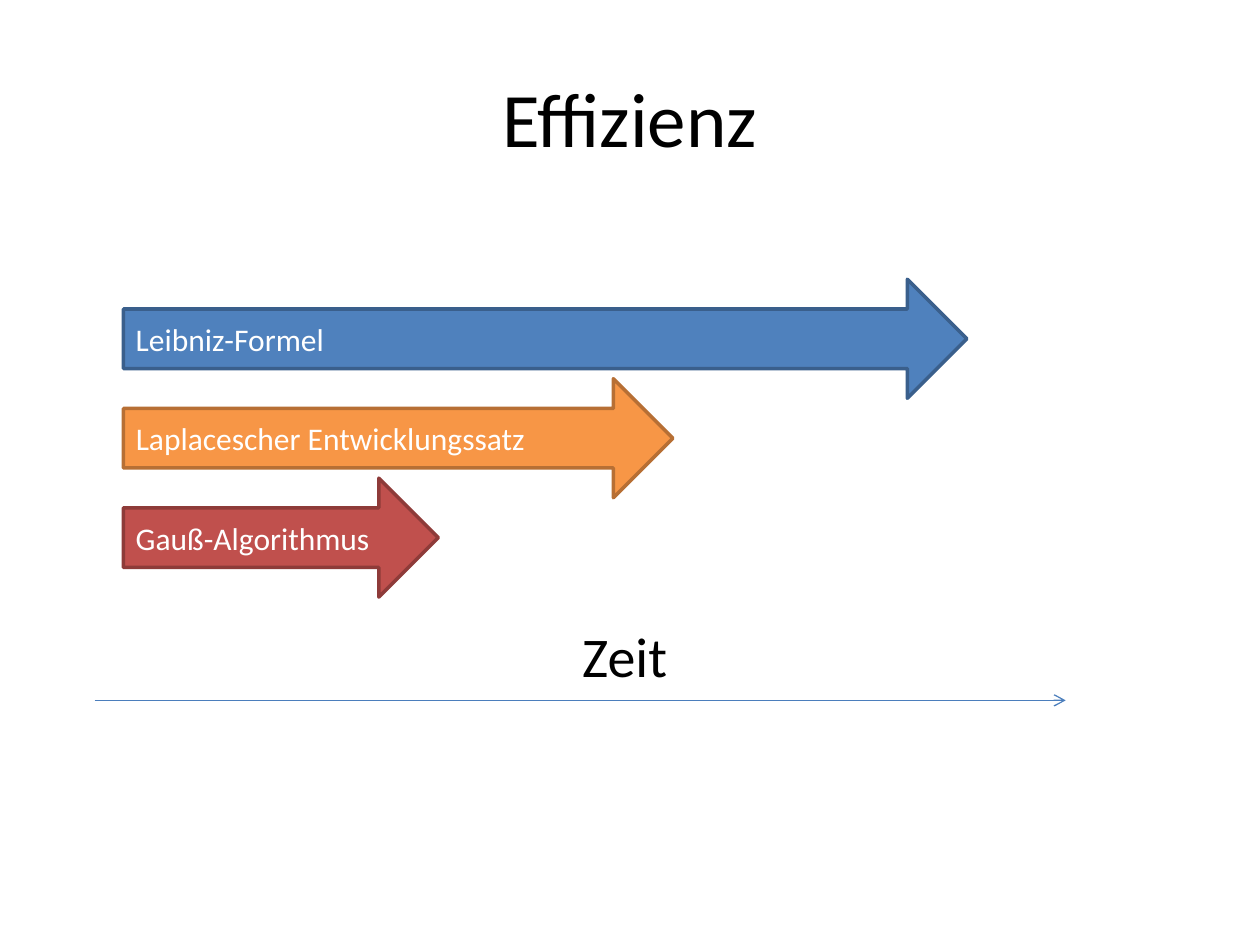
import pptx
import pptx.util
import pptx.dml.color
import pptx.enum.shapes
import pptx.enum.text
import pptx.oxml
import pptx.oxml.ns

Pt = pptx.util.Pt
RGB = pptx.dml.color.RGBColor
Align = pptx.enum.text.PP_ALIGN
Anchor = pptx.enum.text.MSO_ANCHOR
Shape = pptx.enum.shapes.MSO_SHAPE
Link = pptx.enum.shapes.MSO_CONNECTOR

BLACK = RGB(0x00, 0x00, 0x00)
WHITE = RGB(0xFF, 0xFF, 0xFF)
BLUE = RGB(0x4F, 0x81, 0xBD)
NAVY = RGB(0x3A, 0x5F, 0x8C)
ORANGE = RGB(0xF7, 0x96, 0x46)
BROWN = RGB(0xB7, 0x6F, 0x34)
RED = RGB(0xC0, 0x50, 0x4D)
MAROON = RGB(0x8E, 0x3B, 0x39)
AXIS = RGB(0x4B, 0x7E, 0xBC)

TITLE = "Effizienz"
LABEL = "Zeit"
BARS = [
    ("Leibniz-Formel", 482, BLUE, NAVY),
    ("Laplacescher Entwicklungssatz", 314, ORANGE, BROWN),
    ("Gauß-Algorithmus", 180, RED, MAROON),
]
LEFT, TOP, HIGH, STEP = 70.5, 159.6, 68, 56.8
START, END, BASE = 54, 609, 400.2


def write(shape, text, size=18, color=BLACK, align=Align.CENTER, anchor=Anchor.MIDDLE):
    frame = shape.text_frame
    frame.word_wrap = True
    frame.vertical_anchor = anchor
    par = frame.paragraphs[0]
    par.alignment = align
    run = par.add_run()
    run.text = text
    run.font.name = "Calibri"
    run.font.size = Pt(size)
    run.font.color.rgb = color


def main():
    deck = pptx.Presentation()
    deck.slide_width, deck.slide_height = Pt(720), Pt(540)
    slide = deck.slides.add_slide(deck.slide_layouts[5])
    shapes = slide.shapes

    title = shapes.title
    title.left, title.top, title.width, title.height = Pt(36), Pt(21.6), Pt(648), Pt(90)
    write(title, TITLE, size=44)

    label = shapes.add_textbox(Pt(307), Pt(351.6), Pt(100), Pt(46))
    write(label, LABEL, size=32, anchor=Anchor.TOP)

    for i, (name, width, fill, edge) in enumerate(BARS):
        bar = shapes.add_shape(
            Shape.RIGHT_ARROW, Pt(LEFT), Pt(TOP + i * STEP), Pt(width), Pt(HIGH))
        bar.shadow.inherit = False
        bar.fill.solid()
        bar.fill.fore_color.rgb = fill
        bar.line.color.rgb = edge
        bar.line.width = Pt(2)
        write(bar, name, color=WHITE, align=Align.LEFT)

    axis = shapes.add_connector(Link.STRAIGHT, Pt(START), Pt(BASE), Pt(END), Pt(BASE))
    axis.line.color.rgb = AXIS
    axis.line.width = Pt(0.75)
    space = pptx.oxml.ns.nsdecls("a")
    head = pptx.oxml.parse_xml(f'<a:tailEnd {space} type="arrow"/>')
    axis.line._get_or_add_ln().append(head)
    axis._element.spPr.append(pptx.oxml.parse_xml(f"<a:effectLst {space}/>"))

    deck.save("out.pptx")


if __name__ == "__main__":
    main()
